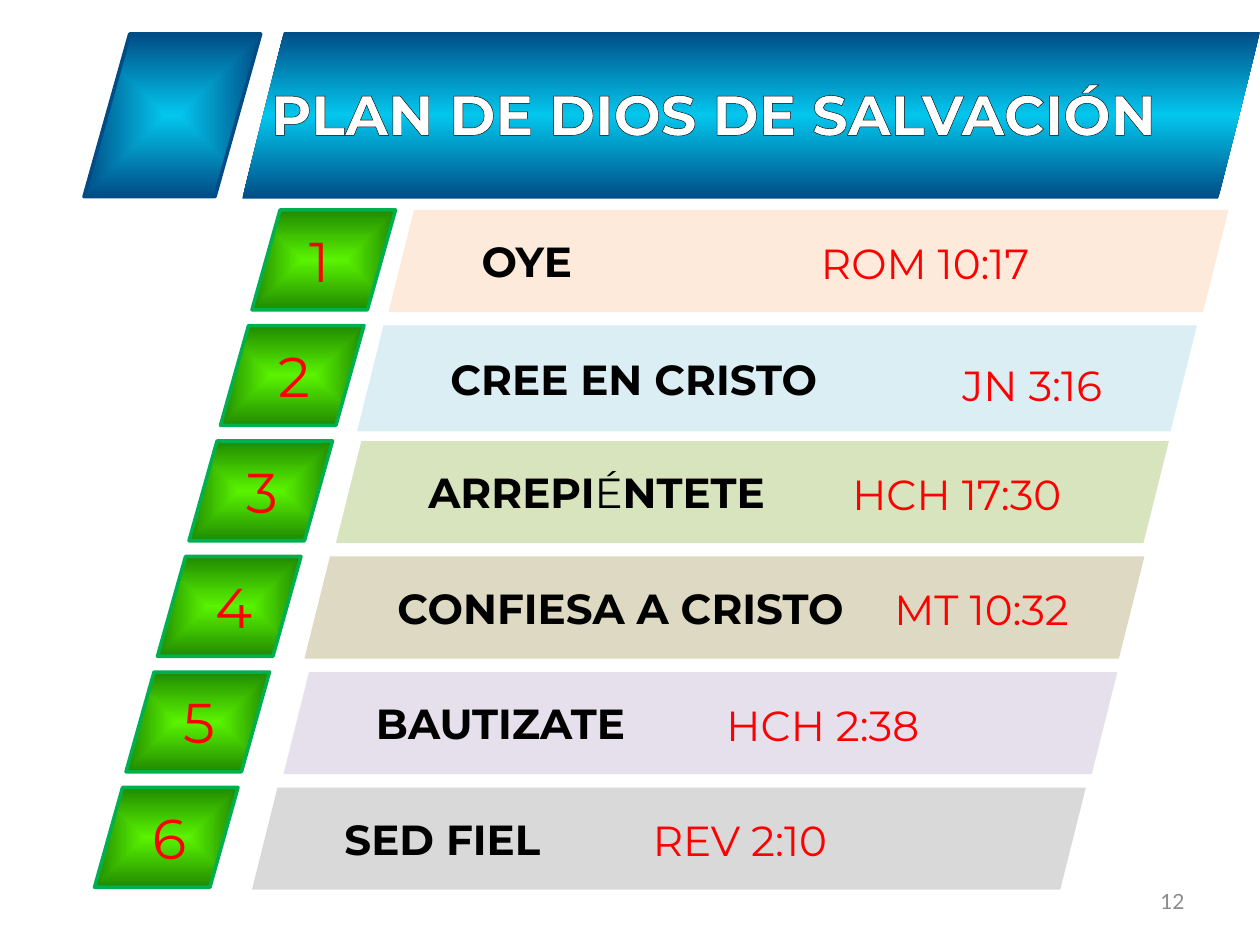
from dataclasses import dataclass
from typing import Any

import lxml.etree
import pptx
import pptx.dml.color
import pptx.enum.shapes
import pptx.enum.text
import pptx.oxml
import pptx.oxml.ns
import pptx.util

Pt = pptx.util.Pt
ANCHOR = pptx.enum.text.MSO_ANCHOR
PARALLELOGRAM = pptx.enum.shapes.MSO_SHAPE.PARALLELOGRAM
CENTRE_PATH = '<a:path path="shape"><a:fillToRect l="50000" t="50000" r="50000" b="50000"/></a:path>'
VERTICAL = '<a:lin ang="5400000" scaled="0"/>'


def rgb(value: str) -> pptx.dml.color.RGBColor:
    return pptx.dml.color.RGBColor.from_string(value)


@dataclass(frozen=True)
class Theme:
    font: str = "Montserrat"
    number_font: str = "Lato"
    white: str = "FFFFFF"
    black: str = "000000"
    red: str = "FF0000"
    grey: str = "8C8C8C"
    cyan: str = "03C6ED"
    navy: str = "004D86"
    lime: str = "5AF300"
    dark_green: str = "208A00"
    border_green: str = "00B050"
    large: float = 32
    body: float = 24
    small: float = 12


@dataclass(frozen=True)
class Box:
    left: float
    top: float
    width: float
    height: float

    def lengths(self) -> tuple:
        return tuple(Pt(v) for v in (self.left, self.top, self.width, self.height))


@dataclass(frozen=True)
class Run:
    text: str
    bold: bool = True


@dataclass(frozen=True)
class Step:
    runs: tuple[Run, ...]
    fill: str
    bar_left: float
    bar_width: float
    verse: str
    verse_left: float
    verse_width: float
    bar_height: float = 58.3
    verse_height: float = 36
    verse_indent: float = 0
    verse_drop: float = 0


THEME = Theme()
FIRST_TOP, ROW_PITCH = 120, 66
FIRST_BADGE_LEFT, BADGE_SHIFT = 144, 18
SKEW = 0.281

STEPS = (
    Step((Run("OYE"),), "FDEADA", 222, 480, "ROM 10:17", 462, 204),
    Step((Run("CREE EN CRISTO"),), "DBEEF4", 204, 480, "JN 3:16", 528, 174,
         bar_height=60.5, verse_height=41, verse_indent=14.7, verse_drop=3.9),
    Step((Run("ARREPI"), Run("É", False), Run("NTETE")), "D7E4BD", 192, 476,
         "HCH 17:30", 480, 180),
    Step((Run("CONFIESA A CRISTO"),), "DDD9C3", 174, 480, "MT 10:32", 504, 168),
    Step((Run("BAUTIZATE"),), "E6E0EC", 162, 476.5, "HCH 2:38", 408, 204),
    Step((Run("SED FIEL"),), "D9D9D9", 144, 476.5, "REV 2:10", 366, 150),
)


def set_all(target: Any, values: dict) -> None:
    for name, value in values.items():
        setattr(target, name, value)


def add_run(p: Any, text: str, size: float, color: str, bold: bool = False,
            font: str = THEME.font) -> Any:
    r = p.add_run()
    r.text = text
    set_all(r.font, {"name": font, "size": Pt(size), "bold": bold})
    r.font.color.rgb = rgb(color)
    return r


def add_label(shapes: Any, box: Box, text: str, size: float, color: str,
              indent: float = 0, drop: float = 0) -> Any:
    """Add a text box; indent and drop widen its left and top margins."""
    tf = shapes.add_textbox(*box.lengths()).text_frame
    set_all(tf, {
        "word_wrap": True,
        "auto_size": pptx.enum.text.MSO_AUTO_SIZE.SHAPE_TO_FIT_TEXT,
        "margin_left": Pt(7.2 + indent),
        "margin_top": Pt(3.6 + drop),
    })
    return add_run(tf.paragraphs[0], text, size, color)


def add_parallelogram(shapes: Any, box: Box, color: str, skew: float = 0.25) -> Any:
    s = shapes.add_shape(PARALLELOGRAM, *box.lengths())
    s.adjustments[0] = skew
    s.shadow.inherit = False
    s.fill.solid()
    s.fill.fore_color.rgb = rgb(color)
    s.line.fill.background()
    return s


def set_gradient(s: Any, colors: tuple[str, ...], direction: str) -> None:
    """Replace the solid fill by evenly spaced colour stops."""
    last = len(colors) - 1
    stops = "".join(
        f'<a:gs pos="{100000 * i // last}"><a:srgbClr val="{c}"/></a:gs>'
        for i, c in enumerate(colors))
    gradient = pptx.oxml.parse_xml(
        f'<a:gradFill {pptx.oxml.ns.nsdecls("a")} rotWithShape="1">'
        f'<a:gsLst>{stops}</a:gsLst>{direction}</a:gradFill>')
    sp_pr = s._element.spPr
    sp_pr.replace(sp_pr.find(pptx.oxml.ns.qn("a:solidFill")), gradient)


def add_badge(shapes: Any, box: Box, inner: str, outer: str, border: str) -> None:
    s = add_parallelogram(shapes, box, inner, SKEW)
    set_gradient(s, (inner, outer), CENTRE_PATH)
    s.line.color.rgb = rgb(border)
    s.line.width = Pt(2)


def outline_text(r: Any, color: str, width: float) -> None:
    line = pptx.oxml.parse_xml(
        f'<a:ln {pptx.oxml.ns.nsdecls("a")} w="{Pt(width)}"><a:solidFill>'
        f'<a:srgbClr val="{color}"/></a:solidFill></a:ln>')
    r.font._element.insert(0, line)


def add_title(slide: Any) -> None:
    shapes = slide.shapes.add_group_shape().shapes
    add_badge(shapes, Box(48, 19.4, 101, 93), THEME.cyan, THEME.navy, THEME.navy)
    banner = add_parallelogram(shapes, Box(138.5, 18, 581.5, 95.5), THEME.navy)
    set_gradient(banner, (THEME.navy, THEME.cyan, THEME.navy), VERTICAL)
    r = add_label(shapes, Box(147.6, 41.8, 572.4, 46), "PLAN DE DIOS DE SALVACIÓN",
                  THEME.large, THEME.white)
    r.font.bold = True
    outline_text(r, THEME.black, 0.75)


def add_step(slide: Any, index: int, step: Step) -> None:
    top = FIRST_TOP + index * ROW_PITCH
    left = FIRST_BADGE_LEFT - index * BADGE_SHIFT

    shapes = slide.shapes.add_group_shape().shapes
    add_badge(shapes, Box(left, top, 82, 57), THEME.lime, THEME.dark_green,
              THEME.border_green)
    add_label(shapes, Box(left + 26, top + 5.6, 31, 46), str(index + 1),
              THEME.large, THEME.red)

    bar = add_parallelogram(
        slide.shapes, Box(step.bar_left, top, step.bar_width, step.bar_height), step.fill)
    tf = bar.text_frame
    set_all(tf, {"word_wrap": True, "vertical_anchor": ANCHOR.MIDDLE})
    p = tf.paragraphs[0]
    p.alignment = pptx.enum.text.PP_ALIGN.LEFT
    for run in step.runs:
        add_run(p, run.text, THEME.body, THEME.black, run.bold)

    add_label(slide.shapes,
              Box(step.verse_left, top + 12, step.verse_width, step.verse_height),
              step.verse, THEME.body, THEME.red, step.verse_indent, step.verse_drop)


def add_slide_number(slide: Any) -> None:
    tf = slide.shapes.add_textbox(*Box(516, 500.5, 168, 28.75).lengths()).text_frame
    set_all(tf, {"word_wrap": True, "vertical_anchor": ANCHOR.MIDDLE})
    p = tf.paragraphs[0]
    p.alignment = pptx.enum.text.PP_ALIGN.RIGHT
    add_run(p, "12", THEME.small, THEME.grey, font=THEME.number_font)


def main() -> None:
    prs = pptx.Presentation()
    set_all(prs, {"slide_width": Pt(720), "slide_height": Pt(540)})
    slide = prs.slides.add_slide(prs.slide_layouts[6])
    add_title(slide)
    for index, step in enumerate(STEPS):
        add_step(slide, index, step)
    add_slide_number(slide)
    prs.save("out.pptx")


if __name__ == "__main__":
    main()
